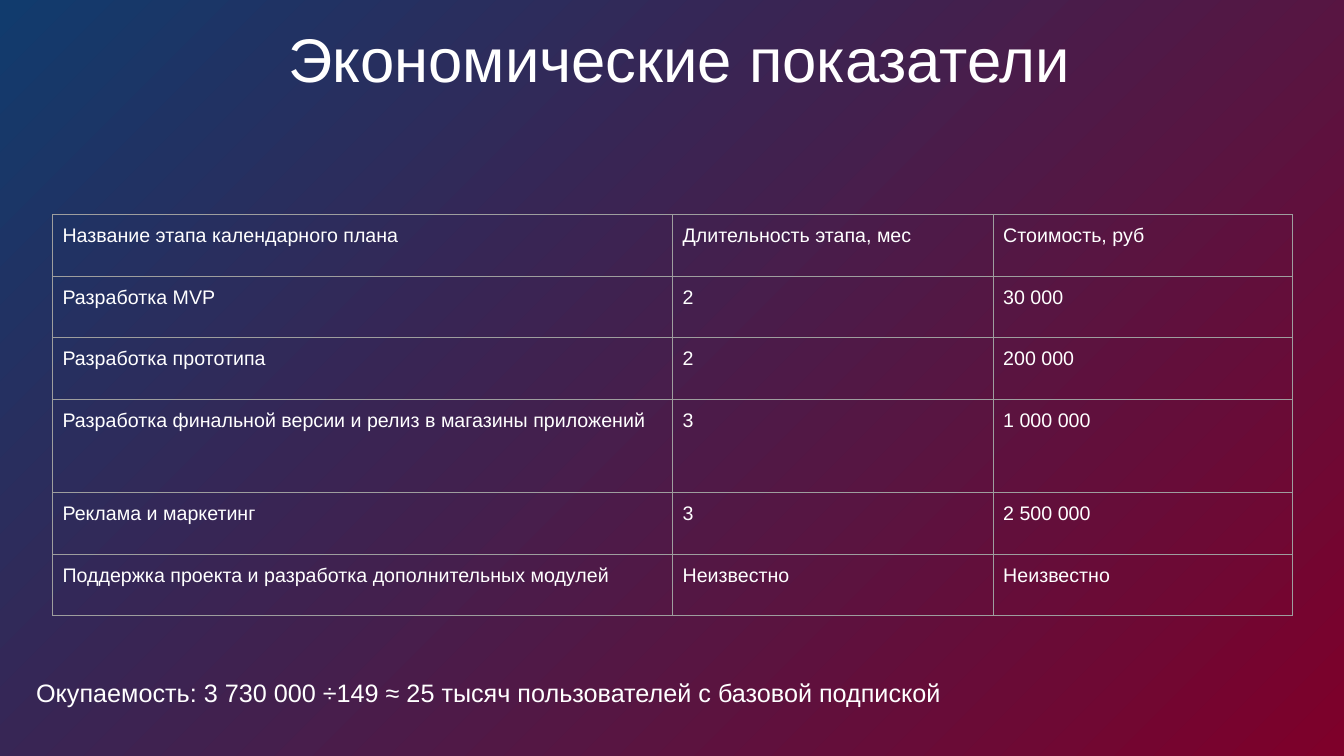
import pptx
import pptx.dml.color
import pptx.enum.text
import pptx.oxml
import pptx.oxml.ns
import pptx.util

Inches = pptx.util.Inches
WHITE = pptx.dml.color.RGBColor(0xFF, 0xFF, 0xFF)
BLUE = pptx.dml.color.RGBColor(0x11, 0x3B, 0x6D)
CRIMSON = pptx.dml.color.RGBColor(0x7E, 0x00, 0x2A)
BORDER_GRAY = pptx.dml.color.RGBColor(0x9E, 0x9E, 0x9E)


def write_text(text_frame, text, size):
    paragraph = text_frame.paragraphs[0]
    paragraph.alignment = pptx.enum.text.PP_ALIGN.LEFT
    run = paragraph.add_run()
    run.text = text
    font_format = {"name": "Arial", "size": pptx.util.Pt(size)}
    for name, value in font_format.items():
        setattr(run.font, name, value)
    run.font.color.rgb = WHITE


def add_borders(cell):
    properties = cell._tc.get_or_add_tcPr()
    for side in ("lnL", "lnR", "lnT", "lnB"):
        properties.append(pptx.oxml.parse_xml(
            f'<a:{side} {pptx.oxml.ns.nsdecls("a")} w="{pptx.util.Pt(0.75)}">'
            f'<a:solidFill><a:srgbClr val="{BORDER_GRAY}"/></a:solidFill></a:{side}>'))


presentation = pptx.Presentation()
presentation.slide_width = Inches(13.33)
presentation.slide_height = Inches(7.5)
slide = presentation.slides.add_slide(presentation.slide_layouts[5])

# Diagonal background gradient
background = slide.background.fill
background.gradient()
background.gradient_angle = 315
for stop, color, position in zip(background.gradient_stops, (BLUE, CRIMSON), (0, 1)):
    stop.color.rgb = color
    stop.position = position

# Title and payback line
title = slide.shapes.title
payback = slide.shapes.add_textbox(0, 0, 0, 0)
text_blocks = [
    (title, (2.76, 0.16, 8.34, 0.84), 0.05, 44, "Экономические показатели"),
    (payback, (0.26, 6.62, 13.33, 0.51), 0.1, 18,
     "Окупаемость: 3 730 000 ÷149 ≈ 25 тысяч пользователей с базовой подпиской"),
]
for shape, box, vertical_margin, size, text in text_blocks:
    for name, value in zip(("left", "top", "width", "height"), box):
        setattr(shape, name, Inches(value))
    frame_format = {
        "word_wrap": True,
        "auto_size": pptx.enum.text.MSO_AUTO_SIZE.SHAPE_TO_FIT_TEXT,
        "vertical_anchor": pptx.enum.text.MSO_ANCHOR.TOP,
        "margin_left": Inches(0.1),
        "margin_right": Inches(0.1),
        "margin_top": Inches(vertical_margin),
        "margin_bottom": Inches(vertical_margin),
    }
    for name, value in frame_format.items():
        setattr(shape.text_frame, name, value)
    write_text(shape.text_frame, text, size)

# Table of project stages
stages = [
    ("Название этапа календарного плана", "Длительность этапа, мес", "Стоимость, руб"),
    ("Разработка MVP", "2", "30 000"),
    ("Разработка прототипа", "2", "200 000"),
    ("Разработка финальной версии и релиз в магазины приложений", "3", "1 000 000"),
    ("Реклама и маркетинг", "3", "2 500 000"),
    ("Поддержка проекта и разработка дополнительных модулей", "Неизвестно", "Неизвестно"),
]
column_widths = (6.15, 3.18, 2.97)
row_heights = (0.61, 0.61, 0.61, 0.93, 0.61, 0.61)
table = slide.shapes.add_table(
    len(stages), len(column_widths), Inches(0.52), Inches(2.13),
    Inches(sum(column_widths)), Inches(sum(row_heights))).table
table.first_row = False
table.horz_banding = False
for column, width in zip(table.columns, column_widths):
    column.width = Inches(width)
for row, height, stage in zip(table.rows, row_heights, stages):
    row.height = Inches(height)
    for cell, text in zip(row.cells, stage):
        for side in ("left", "right", "top", "bottom"):
            setattr(cell, f"margin_{side}", Inches(0.1))
        add_borders(cell)
        cell.fill.background()
        write_text(cell.text_frame, text, 14)

presentation.save("out.pptx")
